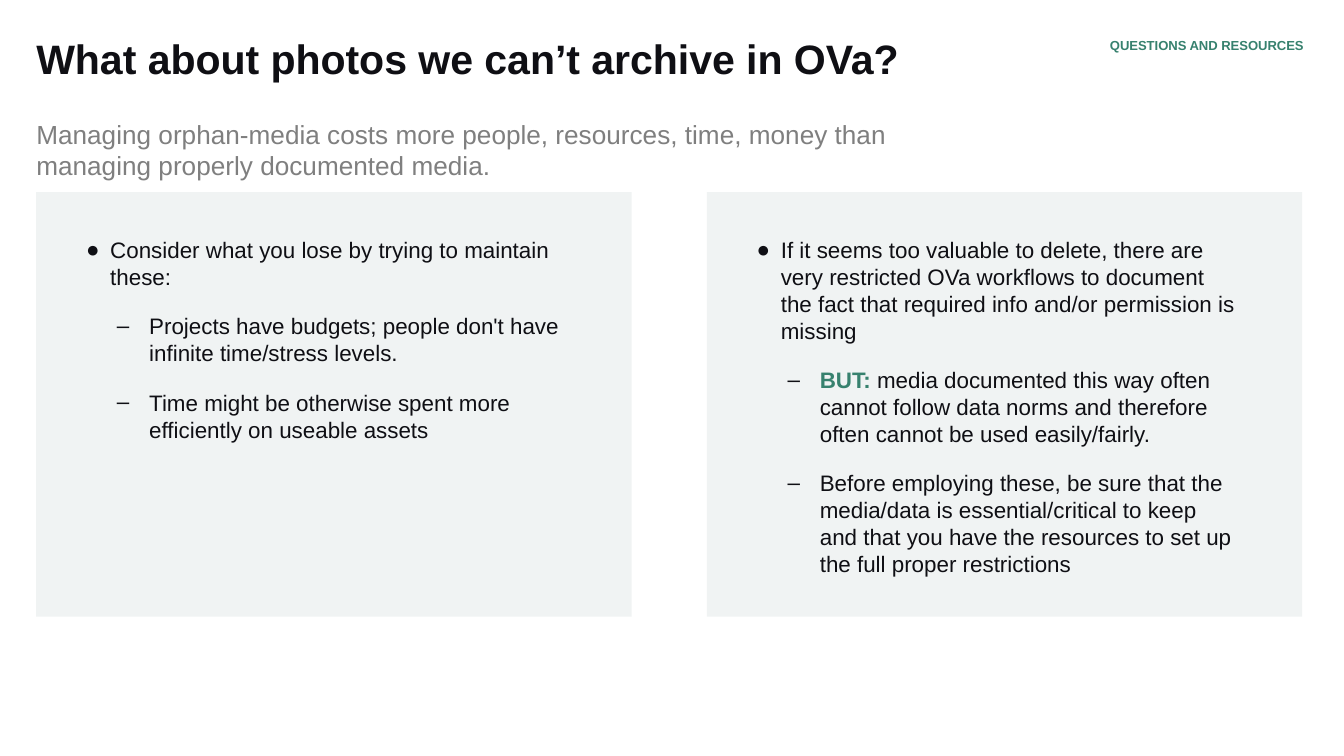
import pptx
import pptx.util
import pptx.dml.color
import pptx.enum.shapes
import pptx.enum.text
import pptx.oxml.ns
import lxml.etree
from dataclasses import dataclass
from typing import Any

Inches = pptx.util.Inches
Pt = pptx.util.Pt
Align = pptx.enum.text.PP_ALIGN

INK, GREEN, GREY, PALE = "0F0F14", "37816E", "7F7F7F", "F0F3F3"


@dataclass
class Label:
    text: str
    box: tuple[float, float, float, float]
    size: int
    tint: str
    bold: bool = False
    right: bool = False
    lead: float = 1.0


@dataclass
class Item:
    text: str
    level: int = 1
    lead: str = ""


@dataclass
class Panel:
    left: float
    items: list[Item]


@dataclass
class Mark:
    char: str
    indent: float
    hang: float


MARKS = [Mark("●", 0.2, 0.18), Mark("–", 0.49, 0.24)]

LABELS = [
    Label("What about photos we can’t archive in OVa?",
          (0.27, 0.29, 7.99, 0.59), 22, INK, bold=True, lead=0.9),
    Label("Managing orphan-media costs more people, resources, time, money than "
          "managing properly documented media.",
          (0.27, 0.88, 7.09, 0.47), 14, GREY),
    Label("QUESTIONS AND RESOURCES",
          (7.57, 0.29, 2.13, 0.16), 7, GREEN, bold=True, right=True, lead=0.9),
]

PANELS = [
    Panel(0.27, [
        Item("Consider what you lose by trying to maintain these:", 0),
        Item("Projects have budgets; people don't have infinite time/stress levels."),
        Item("Time might be otherwise spent more efficiently on useable assets"),
    ]),
    Panel(5.26, [
        Item("If it seems too valuable to delete, there are very restricted OVa "
             "workflows to document the fact that required info and/or permission "
             "is missing", 0),
        Item(" media documented this way often cannot follow data norms and "
             "therefore often cannot be used easily/fairly.", lead="BUT:"),
        Item("Before employing these, be sure that the media/data is "
             "essential/critical to keep and that you have the resources to set up "
             "the full proper restrictions"),
    ]),
]


def color(code: str) -> pptx.dml.color.RGBColor:
    return pptx.dml.color.RGBColor.from_string(code)


def assign(target: Any, values: dict[str, Any]) -> None:
    for name, value in values.items():
        setattr(target, name, value)


def add_run(para: Any, text: str, size: int, tint: str, bold: bool) -> None:
    run = para.add_run()
    run.text = text
    assign(run.font, {"name": "Arial", "size": Pt(size), "bold": bold})
    run.font.color.rgb = color(tint)


def add_frame(slide: Any, box: tuple[float, ...], top: float, right: float) -> Any:
    frame = slide.shapes.add_textbox(*map(Inches, box)).text_frame
    assign(frame, {
        "word_wrap": True,
        "margin_left": 0,
        "margin_top": Inches(top),
        "margin_right": Inches(right),
        "margin_bottom": Inches(0.1),
    })
    return frame


def add_label(slide: Any, label: Label) -> None:
    frame = add_frame(slide, label.box, 0, 0 if label.right else 0.1)
    para = frame.paragraphs[0]
    assign(para, {
        "alignment": Align.RIGHT if label.right else Align.LEFT,
        "line_spacing": label.lead,
    })
    add_run(para, label.text, label.size, label.tint, label.bold)


def add_mark(para: Any, mark: Mark) -> None:
    tag = pptx.oxml.ns.qn
    props = para._p.get_or_add_pPr()
    props.set("marL", str(Inches(mark.indent)))
    props.set("indent", str(-Inches(mark.hang)))
    fill = lxml.etree.SubElement(props, tag("a:buClr"))
    lxml.etree.SubElement(fill, tag("a:srgbClr"), val=INK)
    lxml.etree.SubElement(props, tag("a:buFont"), typeface="Arial")
    lxml.etree.SubElement(props, tag("a:buChar"), char=mark.char)


def add_panel(slide: Any, panel: Panel) -> None:
    rect = slide.shapes.add_shape(
        pptx.enum.shapes.MSO_SHAPE.RECTANGLE,
        *map(Inches, (panel.left, 1.43, 4.43, 3.16)))
    rect.shadow.inherit = False
    rect.fill.solid()
    rect.fill.fore_color.rgb = color(PALE)
    rect.line.fill.background()

    frame = add_frame(slide, (panel.left + 0.35, 1.66, 3.72, 2.56), 0.1, 0.12)
    for spot, item in enumerate(panel.items):
        para = frame.add_paragraph() if spot else frame.paragraphs[0]
        para.level = item.level
        if spot:
            para.space_before = Pt(12)
        add_mark(para, MARKS[item.level])
        if item.lead:
            add_run(para, item.lead, 12, GREEN, True)
        add_run(para, item.text, 12, INK, False)


def main() -> None:
    """Build the slide on photos that cannot be archived."""
    deck = pptx.Presentation()
    assign(deck, {"slide_width": Inches(10), "slide_height": Inches(10) * 9 // 16})
    slide = deck.slides.add_slide(deck.slide_layouts[6])
    for panel in PANELS:
        add_panel(slide, panel)
    for label in LABELS:
        add_label(slide, label)
    deck.save("out.pptx")


if __name__ == "__main__":
    main()
